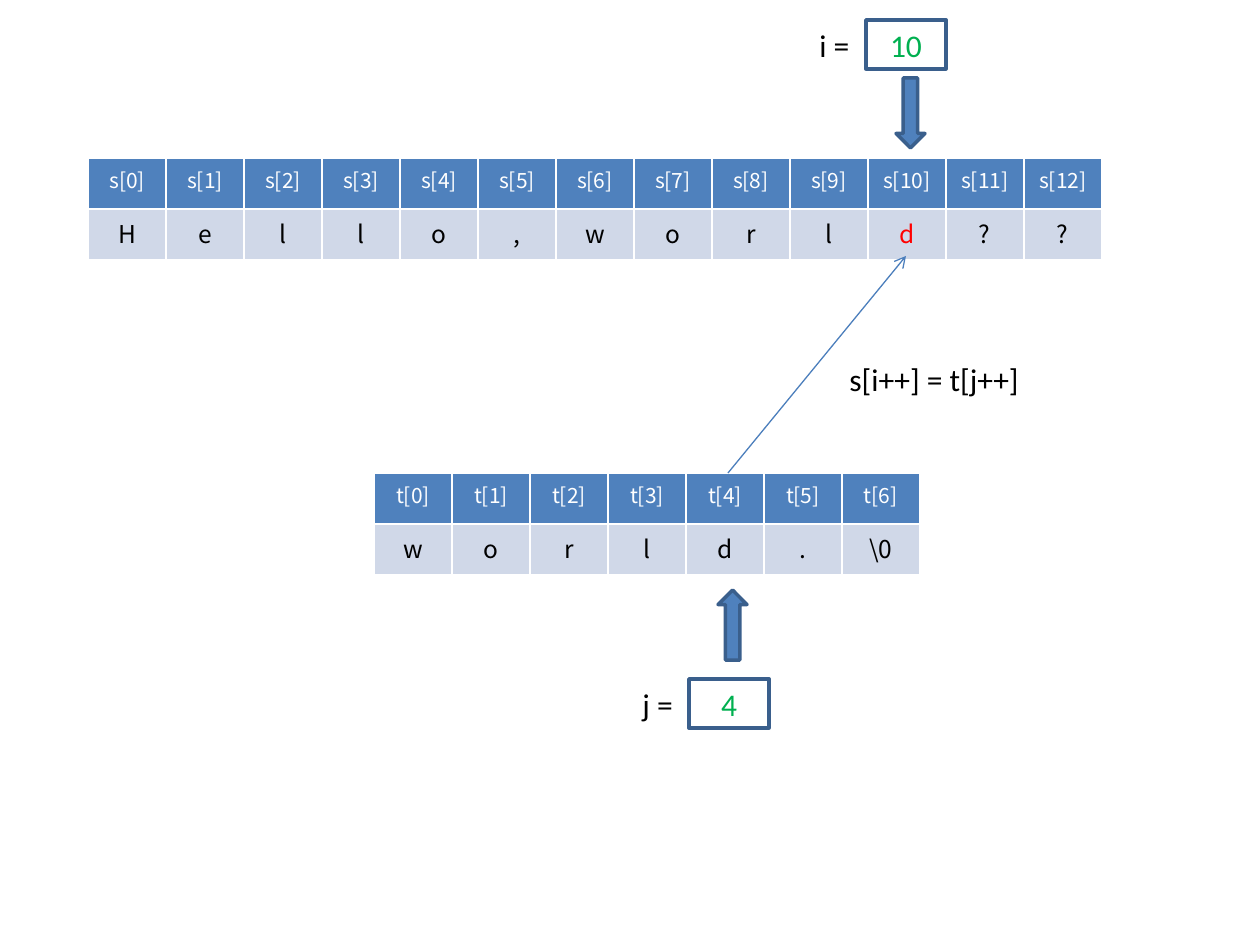
from lxml import etree
from pptx import Presentation
from pptx.dml.color import RGBColor
from pptx.enum.shapes import MSO_CONNECTOR, MSO_SHAPE
from pptx.enum.text import MSO_ANCHOR, MSO_AUTO_SIZE, PP_ALIGN
from pptx.oxml.ns import qn
from pptx.util import Emu, Pt

STRAIGHT = MSO_CONNECTOR.STRAIGHT
RECTANGLE, DOWN_ARROW = MSO_SHAPE.RECTANGLE, MSO_SHAPE.DOWN_ARROW
MIDDLE, CENTER = MSO_ANCHOR.MIDDLE, PP_ALIGN.CENTER
GROW = MSO_AUTO_SIZE.SHAPE_TO_FIT_TEXT

PX = 914400 / 126
COLORS = {
    "header": "4F81BD",
    "cell": "D0D8E8",
    "white": "FFFFFF",
    "black": "000000",
    "copied": "FF0000",
    "index": "00B050",
    "outline": "3A5F8C",
    "assignment": "4B7EBC",
}
CELL_W, CELL_H = 78, 51


def px(*lengths):
    return [Emu(round(length * PX)) for length in lengths]


def style_text(paragraph, font_name, size, color):
    font = paragraph.runs[0].font
    font.name = font_name
    font.size = Pt(size)
    font.bold = False
    font.color.rgb = RGBColor.from_string(COLORS[color])


prs = Presentation()
prs.slide_width, prs.slide_height = px(1260, 945)
slide = prs.slides.add_slide(prs.slide_layouts[6])
shapes = slide.shapes

# Character arrays: indexes above, characters below
arrays = [
    ("s", ["H", "e", "l", "l", "o", ",", "w", "o", "r", "l", "d", "?", "?"], 88, 158, 10),
    ("t", ["w", "o", "r", "l", "d", ".", "\\0"], 374, 473, None),
]
for array_name, characters, left, top, copied_index in arrays:
    count = len(characters)
    array = shapes.add_table(
        2, count, *px(left, top, count * CELL_W, 2 * CELL_H)).table
    for column in array.columns:
        column.width = px(CELL_W)[0]
    for row in array.rows:
        row.height = px(CELL_H)[0]
    for index, character in enumerate(characters):
        char_color = "copied" if index == copied_index else "black"
        cell_rows = [
            (f"{array_name}[{index}]", 12, "white", "header"),
            (character, 14, char_color, "cell"),
        ]
        for row_index, (text, size, color, fill) in enumerate(cell_rows):
            cell = array.cell(row_index, index)
            cell.text_frame.text = text
            paragraph = cell.text_frame.paragraphs[0]
            paragraph.alignment = CENTER
            style_text(paragraph, "Noto Sans CJK JP", size, color)
            cell_props = cell._tc.get_or_add_tcPr()
            for side in ("lnL", "lnR", "lnT", "lnB"):
                border = etree.SubElement(cell_props, qn(f"a:{side}"), w=str(Pt(1)))
                border_fill = etree.SubElement(border, qn("a:solidFill"))
                etree.SubElement(border_fill, qn("a:srgbClr"), val=COLORS["white"])
            cell.fill.solid()
            cell.fill.fore_color.rgb = RGBColor.from_string(COLORS[fill])

# Index boxes and the arrows that point at the arrays
index_parts = [
    (DOWN_ARROW, 896, 78, 29, 70, 0, "header", None),
    (RECTANGLE, 866, 20, 80, 49, 0, "white", "10"),
    (RECTANGLE, 689, 679, 80, 49, 0, "white", "4"),
    (DOWN_ARROW, 718, 590, 29, 70, 180, "header", None),
]
for preset, left, top, width, height, rotation, fill, value in index_parts:
    part = shapes.add_shape(preset, *px(left, top, width, height))
    part.shadow.inherit = False
    part.rotation = rotation
    part.fill.solid()
    part.fill.fore_color.rgb = RGBColor.from_string(COLORS[fill])
    part.line.color.rgb = RGBColor.from_string(COLORS["outline"])
    part.line.width = Pt(2)
    if value:
        part.text_frame.text = value
        part.text_frame.vertical_anchor = MIDDLE
        paragraph = part.text_frame.paragraphs[0]
        paragraph.alignment = CENTER
        style_text(paragraph, "Calibri", 18, "index")

labels = [
    ("i =", 807, 20, 56),
    ("j =", 630, 679, 56),
    ("s[i++] = t[j++]", 837, 354, 196),
]
for text, left, top, width in labels:
    label = shapes.add_textbox(*px(left, top, width, 51))
    label.text_frame.word_wrap = False
    label.text_frame.auto_size = GROW
    label.text_frame.text = text
    style_text(label.text_frame.paragraphs[0], "Calibri", 18, "black")

# Assignment from t[4] to s[10]
assignment = shapes.add_connector(STRAIGHT, *px(728, 473, 906, 256))
assignment.line.color.rgb = RGBColor.from_string(COLORS["assignment"])
assignment.line.width = Pt(0.75)
etree.SubElement(assignment.line._get_or_add_ln(), qn("a:tailEnd"), type="arrow")
etree.SubElement(assignment._element.spPr, qn("a:effectLst"))

prs.save("out.pptx")
